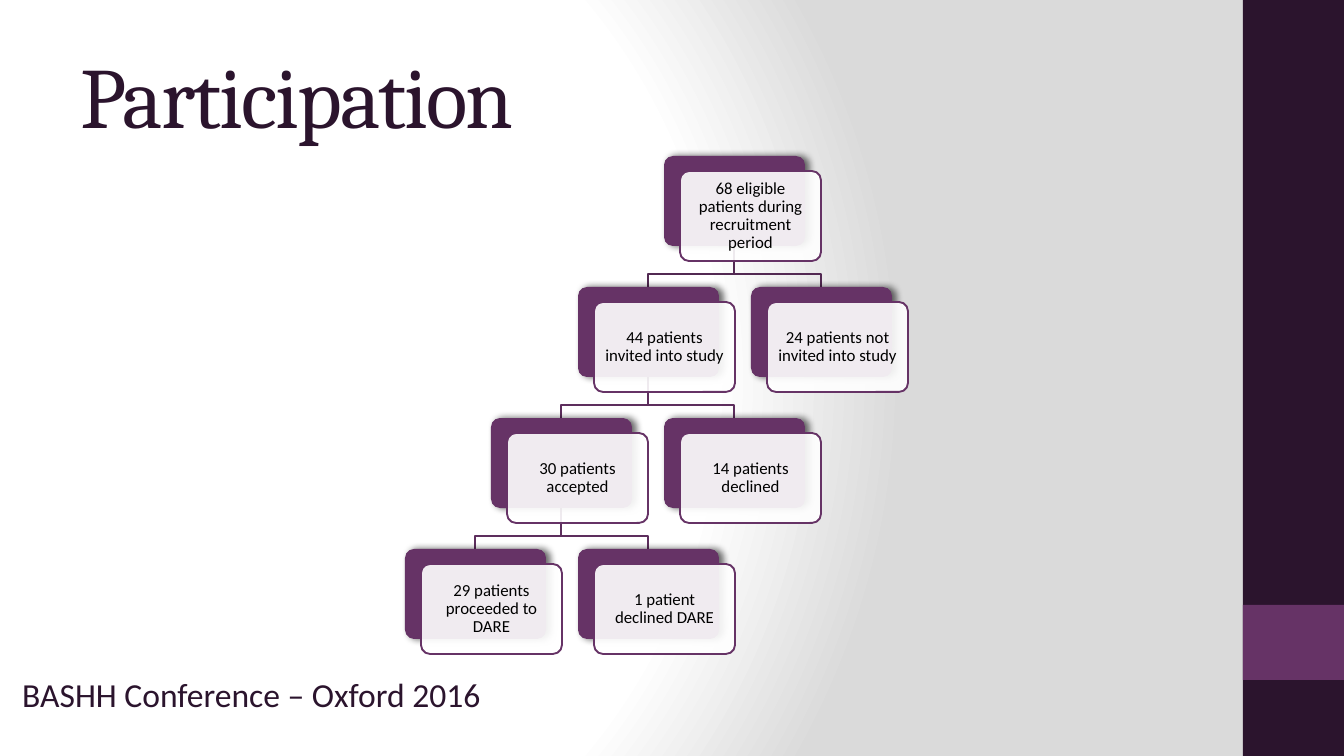
from dataclasses import dataclass

import pptx
import pptx.dml.color
import pptx.enum.shapes
import pptx.enum.text
import pptx.oxml
import pptx.oxml.ns
import pptx.shapes.autoshape
import pptx.slide
import pptx.text.text
import pptx.util

EMU_PER_PX = 914400 / 134.4
SLIDE_W, SLIDE_H = 1344, 756

DARK_PURPLE = pptx.dml.color.RGBColor(0x2B, 0x14, 0x2D)
PURPLE = pptx.dml.color.RGBColor(0x66, 0x33, 0x66)
TOP_LINK = pptx.dml.color.RGBColor(0x52, 0x29, 0x52)
LOWER_LINK = pptx.dml.color.RGBColor(0x5D, 0x2E, 0x5D)
WHITE = pptx.dml.color.RGBColor(0xFF, 0xFF, 0xFF)
BLACK = pptx.dml.color.RGBColor(0, 0, 0)

CARD_W, CARD_H = 141, 90
TREE_LEFT, TREE_TOP = 405, 156
COLUMN_STEP, LEVEL_STEP = 173, 131
FRONT_DX, FRONT_DY = 16, 15
ELBOW_DROP = 28
TEXT_INSET = 8

NS = pptx.oxml.ns.nsdecls("a")
qn = pptx.oxml.ns.qn


@dataclass(frozen=True)
class Group:
    """A group of patients; slot counts half columns from the left."""
    label: str
    slot: int
    level: int
    children: tuple["Group", ...] = ()

    @property
    def left(self) -> int:
        return TREE_LEFT + self.slot * COLUMN_STEP // 2

    @property
    def top(self) -> int:
        return TREE_TOP + self.level * LEVEL_STEP

    @property
    def center(self) -> int:
        return self.left + CARD_W // 2


ACCEPTED = Group("30 patients accepted", 1, 2, (
    Group("29 patients proceeded to DARE", 0, 3),
    Group("1 patient declined DARE", 2, 3)))
INVITED = Group("44 patients invited into study", 2, 1, (
    ACCEPTED, Group("14 patients declined", 3, 2)))
ELIGIBLE = Group("68 eligible patients during recruitment period", 3, 0, (
    INVITED, Group("24 patients not invited into study", 4, 1)))


def px(length: int) -> pptx.util.Emu:
    return pptx.util.Emu(round(length * EMU_PER_PX))


def set_background(slide: pptx.slide.Slide) -> None:
    slide.background.fill.solid()
    properties = slide.element.find(".//" + qn("p:bgPr"))
    stops = "".join(
        f'<a:gs pos="{position}000"><a:srgbClr val="{color}"/></a:gs>'
        for position, color in ((0, "FFFFFF"), (75, "FFFFFF"), (100, "DADADA")))
    properties.replace(properties.find(qn("a:solidFill")), pptx.oxml.parse_xml(
        f'<a:gradFill {NS} rotWithShape="1"><a:gsLst>{stops}</a:gsLst>'
        '<a:path path="circle"><a:fillToRect l="20000" t="50000" r="100000" b="50000"/>'
        '</a:path></a:gradFill>'))


def add_block(slide: pptx.slide.Slide, left: int, top: int, width: int, height: int,
              fill: pptx.dml.color.RGBColor,
              rounded: bool = False) -> pptx.shapes.autoshape.Shape:
    kinds = pptx.enum.shapes.MSO_SHAPE
    block = slide.shapes.add_shape(
        kinds.ROUNDED_RECTANGLE if rounded else kinds.RECTANGLE,
        px(left), px(top), px(width), px(height))
    if rounded:
        block.adjustments[0] = 0.1
    block.fill.solid()
    block.fill.fore_color.rgb = fill
    block.line.fill.background()
    block.shadow.inherit = False
    return block


def style(paragraph: pptx.text.text._Paragraph, font_name: str, size: int,
          color: pptx.dml.color.RGBColor) -> None:
    paragraph.font.name = font_name
    paragraph.font.size = pptx.util.Pt(size)
    paragraph.font.color.rgb = color


def add_links(slide: pptx.slide.Slide, parent: Group) -> None:
    """Draw the elbow lines below a group and all its descendants."""
    start = parent.top + CARD_H
    for child in parent.children:
        builder = slide.shapes.build_freeform(parent.center, start, scale=EMU_PER_PX)
        elbow = start + ELBOW_DROP
        builder.add_line_segments(
            [(parent.center, elbow), (child.center, elbow), (child.center, child.top)],
            close=False)
        link = builder.convert_to_shape()
        link.fill.background()
        link.line.color.rgb = LOWER_LINK if parent.level else TOP_LINK
        link.line.width = pptx.util.Pt(1)
        link.shadow.inherit = False
        add_links(slide, child)


def add_cards(slide: pptx.slide.Slide, group: Group) -> None:
    """Draw the two stacked cards of a group and all its descendants."""
    back = add_block(slide, group.left, group.top, CARD_W, CARD_H, PURPLE, rounded=True)
    back.element.spPr.find(qn("a:effectLst")).append(pptx.oxml.parse_xml(
        f'<a:outerShdw {NS} blurRad="50800" dist="25400" dir="0" rotWithShape="0">'
        '<a:srgbClr val="000000"><a:alpha val="60000"/></a:srgbClr></a:outerShdw>'))

    front = add_block(slide, group.left + FRONT_DX, group.top + FRONT_DY,
                      CARD_W, CARD_H, WHITE, rounded=True)
    front.element.spPr.find(qn("a:solidFill"))[0].append(
        pptx.oxml.parse_xml(f'<a:alpha {NS} val="90000"/>'))
    front.line.color.rgb = PURPLE
    front.line.width = pptx.util.Pt(1)

    frame = front.text_frame
    frame.word_wrap = True
    frame.vertical_anchor = pptx.enum.text.MSO_ANCHOR.MIDDLE
    frame.margin_left = frame.margin_right = px(TEXT_INSET)
    frame.margin_top = frame.margin_bottom = px(TEXT_INSET)
    label = frame.paragraphs[0]
    label.text = group.label
    label.alignment = pptx.enum.text.PP_ALIGN.CENTER
    label.line_spacing = 0.9
    style(label, "Calibri", 9, BLACK)
    for child in group.children:
        add_cards(slide, child)


def add_title(slide: pptx.slide.Slide) -> None:
    title = slide.shapes.title
    title.left, title.top, title.width, title.height = px(67), px(31), px(1120), px(126)
    frame = title.text_frame
    frame.text = "Participation"
    frame.auto_size = pptx.enum.text.MSO_AUTO_SIZE.NONE
    frame.vertical_anchor = pptx.enum.text.MSO_ANCHOR.MIDDLE
    heading = frame.paragraphs[0]
    heading.alignment = pptx.enum.text.PP_ALIGN.LEFT
    style(heading, "Cambria", 46, DARK_PURPLE)
    heading.font._element.set("spc", "-100")


def add_conference(slide: pptx.slide.Slide) -> None:
    box = slide.shapes.add_textbox(px(9), px(667), px(642), px(93))
    box.text_frame.word_wrap = True
    conference = box.text_frame.paragraphs[0]
    conference.text = "BASHH Conference – Oxford 2016"
    style(conference, "Calibri", 18, DARK_PURPLE)


def main() -> None:
    deck = pptx.Presentation()
    deck.slide_width, deck.slide_height = px(SLIDE_W), px(SLIDE_H)
    slide = deck.slides.add_slide(deck.slide_layouts.get_by_name("Title Only"))
    set_background(slide)
    add_block(slide, 1243, 0, 101, SLIDE_H, DARK_PURPLE)
    add_block(slide, 1243, 605, 101, 75, PURPLE)
    add_conference(slide)
    add_title(slide)
    add_links(slide, ELIGIBLE)
    add_cards(slide, ELIGIBLE)
    deck.save("out.pptx")


if __name__ == "__main__":
    main()
